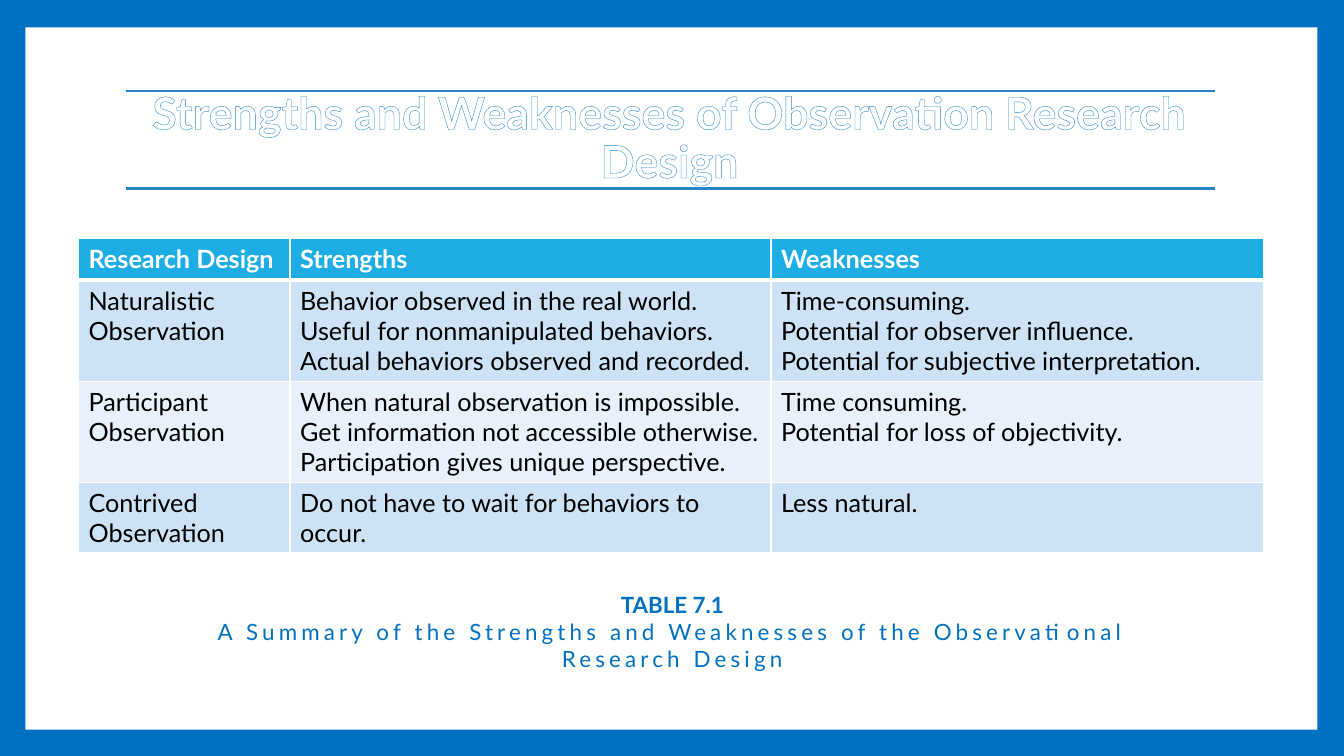
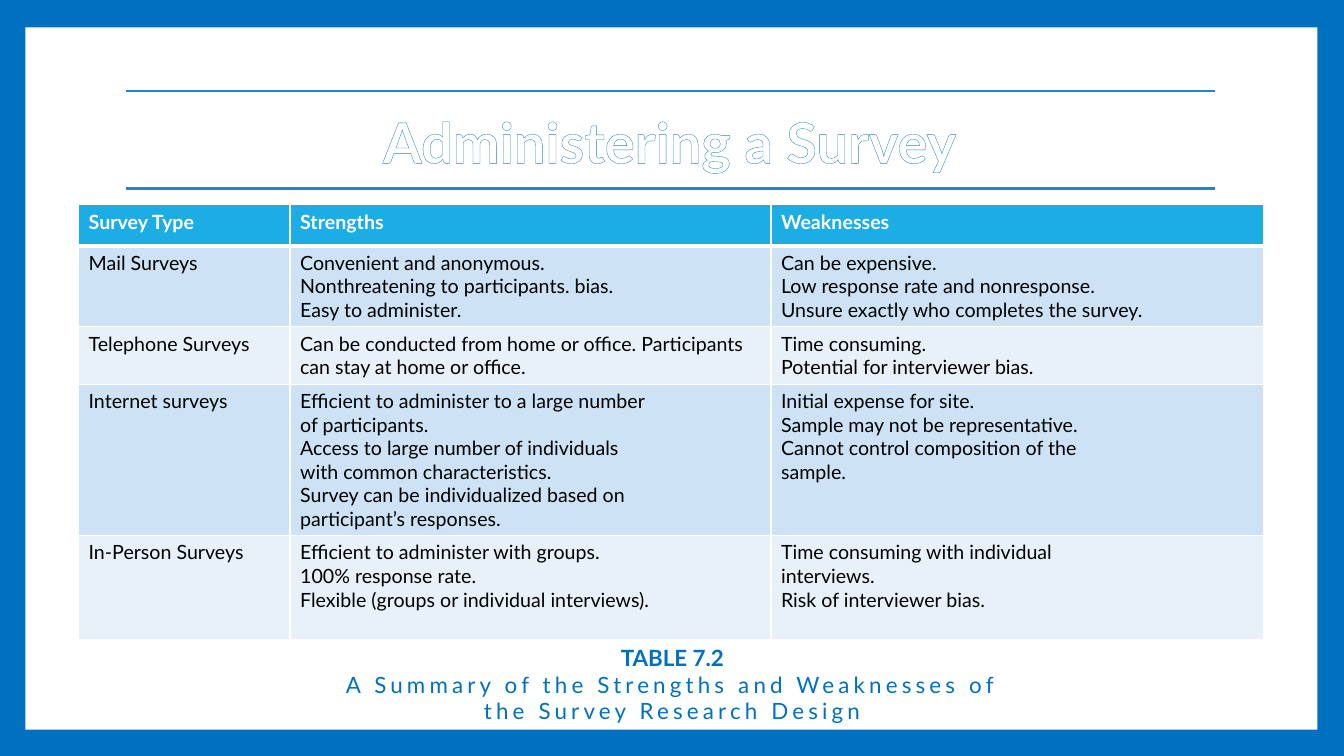
import pptx
import pptx.dml.color
import pptx.enum.shapes
import pptx.enum.text
import pptx.oxml
import pptx.oxml.ns
import pptx.util
from lxml import etree

Cm = pptx.util.Cm
Pt = pptx.util.Pt
RGBColor = pptx.dml.color.RGBColor
qn = pptx.oxml.ns.qn

FONT = "Lato"
BLUE = RGBColor(0x00, 0x70, 0xC0)
RULE_BLUE = RGBColor(0x26, 0x83, 0xC6)
HEADER_BLUE = RGBColor(0x1C, 0xAD, 0xE4)
BAND_DARK = RGBColor(0xCD, 0xE3, 0xF5)
BAND_LIGHT = RGBColor(0xE8, 0xF1, 0xFA)
WHITE = RGBColor(0xFF, 0xFF, 0xFF)
BLACK = RGBColor(0x00, 0x00, 0x00)

# Lengths are centimetres; boxes are left, top, width, height.
PANEL = (0.64, 0.69, 32.56, 17.7)
RULE_LEFT, RULE_RIGHT = 3.18, 30.61
RULE_TOPS = (2.29, 4.75)
TABLE_LEFT = 1.98
COLUMN_WIDTHS = (5.33, 12.12, 12.42)

SLIDES = [
    {
        "title": "Strengths and Weaknesses of Observation Research Design",
        "title_box": (2.36, 1.63, 29.03, 3.76),
        "title_size": 32,
        "caption": ("TABLE 7.1",
                    "A Summary of the Strengths and Weaknesses of the "
                    "Observational Research Design"),
        "caption_box": (4.98, 14.78, 23.8, 2.31),
        "table_top": 6.02,
        "table_size": 18,
        "row_heights": (1.04, 2.55, 2.55, 1.75),
        "rows": [
            ("Research Design", "Strengths", "Weaknesses"),
            ("Naturalistic\nObservation",
             "Behavior observed in the real world.\n"
             "Useful for nonmanipulated behaviors.\n"
             "Actual behaviors observed and recorded.",
             "Time-consuming.\n"
             "Potential for observer influence.\n"
             "Potential for subjective interpretation."),
            ("Participant\nObservation",
             "When natural observation is impossible.\n"
             "Get information not accessible otherwise.\n"
             "Participation gives unique perspective.",
             "Time consuming.\n"
             "Potential for loss of objectivity."),
            ("Contrived\nObservation",
             "Do not have to wait for behaviors to occur.",
             "Less natural."),
        ],
    },
    {
        "title": "Administering a Survey",
        "title_box": (3.91, 1.78, 25.93, 3.76),
        "title_size": 40,
        "caption": ("TABLE 7.2",
                    "A Summary of the Strengths and Weaknesses of "
                    "the Survey Research Design"),
        "caption_box": (7.85, 16.1, 18.06, 2.31),
        "table_top": 5.16,
        "table_size": 14,
        "row_heights": (1.04, 2.02, 1.45, 3.81, 2.63),
        "rows": [
            ("Survey Type", "Strengths", "Weaknesses"),
            ("Mail Surveys",
             "Convenient and anonymous.\n"
             "Nonthreatening to participants. bias.\n"
             "Easy to administer.",
             "Can be expensive.\n"
             "Low response rate and nonresponse.\n"
             "Unsure exactly who completes the survey."),
            ("Telephone Surveys",
             "Can be conducted from home or office. "
             "Participants can stay at home or office.",
             "Time consuming.\n"
             "Potential for interviewer bias."),
            ("Internet surveys",
             "Efficient to administer to a large number\n"
             "of participants.\n"
             "Access to large number of individuals\n"
             "with common characteristics.\n"
             "Survey can be individualized based on\n"
             "participant’s responses.",
             "Initial expense for site.\n"
             "Sample may not be representative.\n"
             "Cannot control composition of the\n"
             "sample."),
            ("In-Person Surveys",
             "Efficient to administer with groups.\n"
             "100% response rate.\n"
             "Flexible (groups or individual interviews).",
             "Time consuming with individual\n"
             "interviews.\n"
             "Risk of interviewer bias."),
        ],
    },
]


def style_runs(paragraph, size, color, bold=False):
    for run in paragraph.runs:
        run.font.name = FONT
        run.font.size = Pt(size)
        run.font.bold = bold
        run.font.color.rgb = color


def line_element(tag, color, width):
    """Return a solid line element for a text outline or a cell border."""
    return pptx.oxml.parse_xml(
        f'<a:{tag} xmlns:a="{pptx.oxml.ns.nsuri("a")}" w="{int(Pt(width))}">'
        f'<a:solidFill><a:srgbClr val="{color}"/></a:solidFill></a:{tag}>')


def add_text(slide, box, text):
    """Add a wrapping box of centred paragraphs and return its text frame."""
    frame = slide.shapes.add_textbox(*map(Cm, box)).text_frame
    frame.word_wrap = True
    frame.text = text
    for paragraph in frame.paragraphs:
        paragraph.alignment = pptx.enum.text.PP_ALIGN.CENTER
    return frame


def add_frame(slide):
    """Add the white panel and the two rules around the title."""
    panel = slide.shapes.add_shape(
        pptx.enum.shapes.MSO_SHAPE.RECTANGLE, *map(Cm, PANEL))
    panel.shadow.inherit = False
    panel.fill.solid()
    panel.fill.fore_color.rgb = WHITE
    panel.line.fill.background()
    for top in RULE_TOPS:
        rule = slide.shapes.add_connector(
            pptx.enum.shapes.MSO_CONNECTOR.STRAIGHT,
            Cm(RULE_LEFT), Cm(top), Cm(RULE_RIGHT), Cm(top))
        rule.line.color.rgb = RULE_BLUE
        rule.line.width = Pt(1.5)
        etree.SubElement(rule._element.spPr, qn("a:effectLst"))


def add_title(slide, content):
    frame = add_text(slide, content["title_box"], content["title"])
    frame.vertical_anchor = pptx.enum.text.MSO_ANCHOR.MIDDLE
    paragraph = frame.paragraphs[0]
    paragraph.line_spacing = 0.9
    style_runs(paragraph, content["title_size"], WHITE, bold=True)
    run_properties = paragraph.runs[0]._r.get_or_add_rPr()
    run_properties.insert(0, line_element("ln", RULE_BLUE, 0.52))


def add_caption(slide, content):
    frame = add_text(slide, content["caption_box"], "\n".join(content["caption"]))
    frame.margin_left = Cm(0.38)
    label, summary = frame.paragraphs
    style_runs(label, 16, BLUE, bold=True)
    style_runs(summary, 16, BLUE)
    summary.runs[0]._r.get_or_add_rPr().set("spc", "300")


def style_cell(cell, row_index, size):
    is_header = row_index == 0
    widths = {"lnL": 1, "lnR": 1,
              "lnT": 3 if row_index == 1 else 1,
              "lnB": 3 if is_header else 1}
    properties = cell._tc.get_or_add_tcPr()
    for tag, width in widths.items():
        properties.append(line_element(tag, WHITE, width))
    cell.fill.solid()
    band = BAND_DARK if row_index % 2 else BAND_LIGHT
    cell.fill.fore_color.rgb = HEADER_BLUE if is_header else band
    for paragraph in cell.text_frame.paragraphs:
        style_runs(paragraph, size, WHITE if is_header else BLACK, bold=is_header)


def add_comparison_table(slide, content):
    rows, heights = content["rows"], content["row_heights"]
    table = slide.shapes.add_table(
        len(rows), len(COLUMN_WIDTHS), Cm(TABLE_LEFT), Cm(content["table_top"]),
        Cm(sum(COLUMN_WIDTHS)), Cm(sum(heights))).table
    for column, width in zip(table.columns, COLUMN_WIDTHS):
        column.width = Cm(width)
    for row_index, (row, height, texts) in enumerate(zip(table.rows, heights, rows)):
        row.height = Cm(height)
        for cell, text in zip(row.cells, texts):
            cell.text_frame.text = text
            style_cell(cell, row_index, content["table_size"])


def main():
    deck = pptx.Presentation()
    deck.slide_width, deck.slide_height = Cm(33.87), Cm(19.05)
    background = deck.slide_master.background.fill
    background.solid()
    background.fore_color.rgb = BLUE
    for content in SLIDES:
        slide = deck.slides.add_slide(deck.slide_layouts[6])
        add_frame(slide)
        add_title(slide, content)
        add_caption(slide, content)
        add_comparison_table(slide, content)
    deck.save("out.pptx")


if __name__ == "__main__":
    main()
